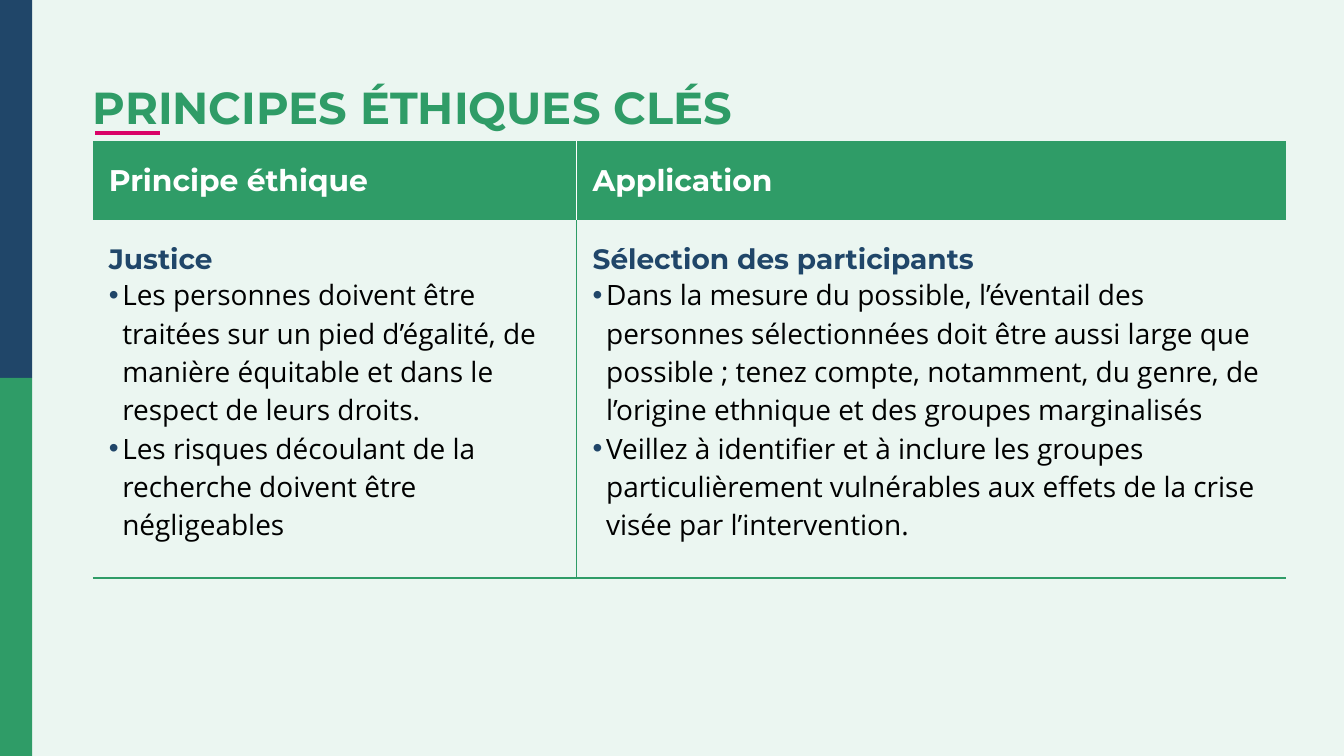
from lxml import etree
from pptx import Presentation
from pptx import util as u
from pptx.dml.color import RGBColor
from pptx.enum import shapes, text
from pptx.oxml import ns

GREEN, NAVY, PINK = "2F9C67", "204669", "D90368"
WHITE, BLACK, MINT = "FFFFFF", "000000", "EBF6F1"
HEADING, BODY = "Montserrat", "Open Sans"
WIDTH = 10
HEIGHT = WIDTH * 9 / 16


def color(value):
    return RGBColor.from_string(value)


def child(parent, tag, **attributes):
    return etree.SubElement(parent, ns.qn(tag), attributes)


class SlideBuilder:
    def __init__(self, presentation):
        self.slide = presentation.slides.add_slide(presentation.slide_layouts[5])
        self.slide.background.fill.solid()
        self.slide.background.fill.fore_color.rgb = color(MINT)

    def run(self, paragraph, content, size, font, hue, bold):
        run = paragraph.add_run()
        run.text = content
        run.font.size = u.Pt(size)
        run.font.name = font
        run.font.bold = bold
        run.font.color.rgb = color(hue)

    def title(self, content, left, top, width, height):
        shape = self.slide.shapes.title
        shape.left, shape.top = u.Inches(left), u.Inches(top)
        shape.width, shape.height = u.Inches(width), u.Inches(height)
        frame = shape.text_frame
        frame.margin_left = 0
        frame.vertical_anchor = text.MSO_ANCHOR.MIDDLE
        frame.auto_size = text.MSO_AUTO_SIZE.NONE
        paragraph = frame.paragraphs[0]
        paragraph.alignment = text.PP_ALIGN.LEFT
        paragraph.line_spacing = 0.9
        self.run(paragraph, content, 24, HEADING, GREEN, True)

    def rectangle(self, left, top, width, height, fill):
        shape = self.slide.shapes.add_shape(
            shapes.MSO_SHAPE.RECTANGLE, u.Inches(left), u.Inches(top),
            u.Inches(width), u.Inches(height))
        shape.shadow.inherit = False
        shape.fill.solid()
        shape.fill.fore_color.rgb = color(fill)
        shape.line.fill.background()

    def line(self, left, right, y, hue, width):
        connector = self.slide.shapes.add_connector(
            shapes.MSO_CONNECTOR.STRAIGHT, u.Inches(left), u.Inches(y),
            u.Inches(right), u.Inches(y))
        connector.line.color.rgb = color(hue)
        connector.line.width = u.Pt(width)
        child(connector._element.spPr, "a:effectLst")

    def table(self, left, top, columns, rows):
        frame = self.slide.shapes.add_table(
            len(rows), len(columns), u.Inches(left), u.Inches(top),
            u.Inches(sum(columns)), u.Inches(sum(rows)))
        table = frame.table
        table.horz_banding = False
        for column, width in zip(table.columns, columns):
            column.width = u.Inches(width)
        for row, height in zip(table.rows, rows):
            row.height = u.Inches(height)
        return table

    def cell(self, cell, borders, fill=None):
        cell.margin_left, cell.margin_right = u.Inches(0.12), u.Inches(0.07)
        cell.margin_top = cell.margin_bottom = u.Inches(0.16)
        properties = cell._tc.get_or_add_tcPr()
        for side in "LRTB":
            border = child(properties, f"a:ln{side}", w=str(u.Pt(0.75)))
            if side in borders:
                solid = child(border, "a:solidFill")
                child(solid, "a:srgbClr", val=borders[side])
            else:
                child(border, "a:noFill")
        if fill:
            cell.fill.solid()
            cell.fill.fore_color.rgb = color(fill)
        else:
            cell.fill.background()

    def bullet(self, paragraph, content, hanging):
        properties = paragraph._p.get_or_add_pPr()
        properties.set("marL", str(u.Inches(0.1)))
        properties.set("indent", str(-u.Inches(hanging)))
        child(child(properties, "a:buClr"), "a:srgbClr", val=NAVY)
        child(properties, "a:buFont", typeface="Arial")
        child(properties, "a:buChar", char="•")
        self.run(paragraph, content, 15, BODY, BLACK, False)


def main():
    presentation = Presentation()
    presentation.slide_width = u.Inches(WIDTH)
    presentation.slide_height = u.Inches(HEIGHT)
    builder = SlideBuilder(presentation)

    # Accent, title and two-part side band
    builder.line(0.71, 1.19, 0.99, PINK, 2.25)
    builder.title("PRINCIPES ÉTHIQUES CLÉS", 0.69, 0.59, 8.62, 0.46)
    for index, fill in enumerate((NAVY, GREEN)):
        builder.rectangle(0, HEIGHT / 2 * index, 0.24, HEIGHT / 2, fill)

    # Principles table: header, subheading, bullet hanging indent, bullets
    principles = [
        ("Principe éthique", "Justice", 0.1, [
            "Les personnes doivent être traitées sur un pied d’égalité, de manière "
            "équitable et dans le respect de leurs droits.",
            "Les risques découlant de la recherche doivent être négligeables"]),
        ("Application", "Sélection des participants", 0.14, [
            "Dans la mesure du possible, l’éventail des personnes sélectionnées doit "
            "être aussi large que possible ; tenez compte, notamment, du genre, de "
            "l’origine ethnique et des groupes marginalisés",
            "Veillez à identifier et à inclure les groupes particulièrement vulnérables "
            "aux effets de la crise visée par l’intervention."]),
    ]
    table = builder.table(0.69, 1.05, [3.6, 5.28], [0.59, 2.66])
    for index, (header, subheading, hanging, bullets) in enumerate(principles):
        inner_side = "RL"[index]

        header_cell = table.cell(0, index)
        builder.cell(header_cell, {inner_side: WHITE}, GREEN)
        header_cell.vertical_anchor = text.MSO_ANCHOR.MIDDLE
        builder.run(header_cell.text_frame.paragraphs[0], header, 16, HEADING, WHITE, True)

        body_cell = table.cell(1, index)
        builder.cell(body_cell, {inner_side: GREEN, "B": GREEN})
        frame = body_cell.text_frame
        builder.run(frame.paragraphs[0], subheading, 15, HEADING, NAVY, True)
        for content in bullets:
            builder.bullet(frame.add_paragraph(), content, hanging)

    presentation.save("out.pptx")


if __name__ == "__main__":
    main()
